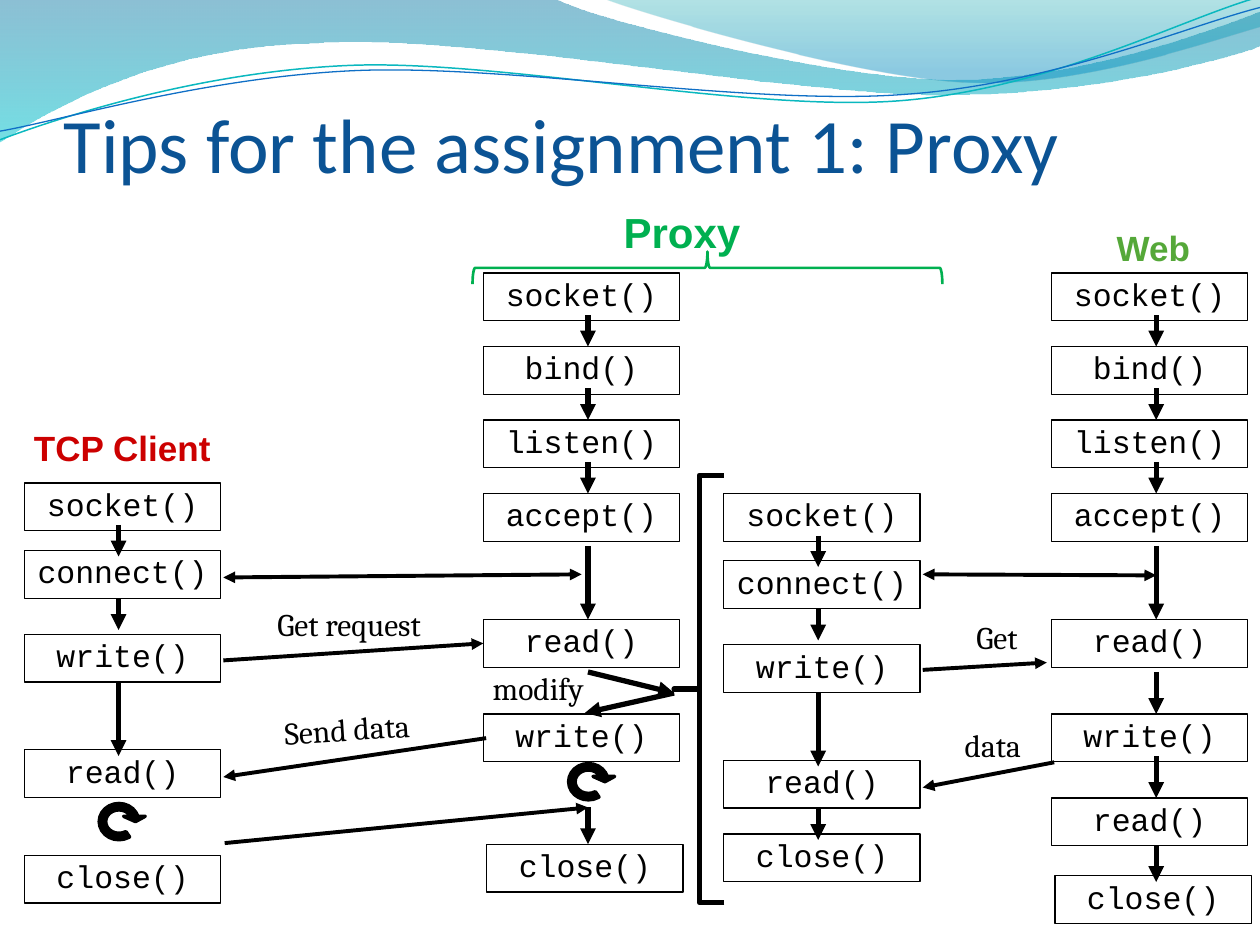
from dataclasses import dataclass, field
from typing import Any, NamedTuple

from lxml import etree
from pptx import Presentation
from pptx import util as u
from pptx.dml.color import RGBColor
from pptx.enum import shapes, text
from pptx.oxml.ns import qn

WIDTH, HEIGHT = u.Inches(10), u.Inches(7.5)
COLUMNS, ROWS = 120, 90
BOX_WIDTH, BOX_HEIGHT = 18.7, 4.55

BLACK = RGBColor(0x00, 0x00, 0x00)
TITLE_BLUE = RGBColor(0x0B, 0x53, 0x94)
GREEN = RGBColor(0x00, 0xB0, 0x50)
WEB_GREEN = RGBColor(0x55, 0xA8, 0x39)
RED = RGBColor(0xCC, 0x00, 0x00)
WAVE_TEAL = RGBColor(0x0A, 0xB8, 0xBF)
WAVE_BLUE = RGBColor(0x0F, 0x6F, 0xC6)
DEEP_BLUE = RGBColor(0x00, 0x74, 0xA1)
AQUA = RGBColor(0x00, 0xC6, 0xCF)
SEA_GREEN = RGBColor(0x00, 0xA1, 0xA9)
SKY_BLUE = RGBColor(0x00, 0x8B, 0xBF)

CODE = dict(name="Courier New", size=u.Pt(18))
NOTE = dict(name="Cambria", size=u.Pt(18))
HEADING = dict(name="Arial", size=u.Pt(20), bold=True)


class Stop(NamedTuple):
    position: float
    color: RGBColor
    opacity: int  # percent


class Call(NamedTuple):
    name: str
    row: float
    shift: float = 0


@dataclass
class Lane:
    left: float
    arrow_column: float
    calls: list[Call]
    arrows: list[tuple[float, float]]
    boxes: list[Any] = field(default_factory=list)


@dataclass
class Label:
    words: str
    left: float
    top: float
    width: float
    height: float
    font: dict
    color: RGBColor = BLACK
    rotation: float = 0
    wrap: bool = False


@dataclass
class Message:
    start: tuple[float, float]
    end: tuple[float, float]
    width: float = 2.25
    both: bool = False
    end_joint: tuple | None = None  # box, side


def x(column: float) -> int:
    return round(WIDTH * column / COLUMNS)


def y(row: float) -> int:
    return round(HEIGHT * row / ROWS)


def set_line(shape, color: RGBColor, width: float) -> None:
    shape.line.color.rgb = color
    shape.line.width = u.Pt(width)


def write(shape, words: str, font: dict, color: RGBColor, frame: dict, layout: dict) -> None:
    paragraph = shape.text_frame.paragraphs[0]
    run = paragraph.add_run()
    run.text = words
    run.font.color.rgb = color
    for target, formats in ((shape.text_frame, frame), (paragraph, layout), (run.font, font)):
        for name, value in formats.items():
            setattr(target, name, value)


def add_preset(slide, kind, left, top, width, height, color=BLACK, line=0.75,
               filled=False, adjustments=(), rotation=0):
    shape = slide.shapes.add_shape(kind, x(left), y(top), x(width), y(height))
    shape.shadow.inherit = False
    shape.rotation = rotation
    if filled:
        shape.fill.solid()
        shape.fill.fore_color.rgb = color
    else:
        shape.fill.background()
    set_line(shape, color, line)
    for index, value in enumerate(adjustments):
        shape.adjustments[index] = value
    return shape


def add_label(slide, label: Label) -> None:
    box = slide.shapes.add_textbox(x(label.left), y(label.top), x(label.width), y(label.height))
    box.rotation = label.rotation
    write(box, label.words, label.font, label.color,
          dict(word_wrap=label.wrap, vertical_anchor=text.MSO_ANCHOR.MIDDLE,
               auto_size=text.MSO_AUTO_SIZE.SHAPE_TO_FIT_TEXT),
          dict(alignment=text.PP_ALIGN.CENTER))


def add_arrow(slide, message: Message) -> None:
    (x1, y1), (x2, y2) = message.start, message.end
    arrow = slide.shapes.add_connector(shapes.MSO_CONNECTOR.STRAIGHT, x(x1), y(y1), x(x2), y(y2))
    set_line(arrow, BLACK, message.width)
    if message.end_joint:
        arrow.end_connect(*message.end_joint)
    for tag in ("a:headEnd", "a:tailEnd") if message.both else ("a:tailEnd",):
        etree.SubElement(arrow.line._get_or_add_ln(), qn(tag), type="triangle")
    etree.SubElement(arrow._element.spPr, qn("a:effectLst"))


def add_lane(slide, lane: Lane) -> None:
    for call in lane.calls:
        box = add_preset(slide, shapes.MSO_SHAPE.RECTANGLE, lane.left + call.shift, call.row,
                         BOX_WIDTH, BOX_HEIGHT)
        write(box, call.name + "()", CODE, BLACK,
              dict(word_wrap=False, vertical_anchor=text.MSO_ANCHOR.TOP),
              dict(alignment=text.PP_ALIGN.CENTER, line_spacing=0.9))
        lane.boxes.append(box)
    for start, end in lane.arrows:
        add_arrow(slide, Message((lane.arrow_column, start), (lane.arrow_column, end), 3))


def add_wave(slide, start, segments, stops=(), color=None, width=0.75, rotation=0) -> None:
    """Points are percentages of the slide width; six numbers make a cubic curve."""
    points = [start] + [pair for segment in segments for pair in zip(segment[::2], segment[1::2])]
    points = [(round(a * WIDTH / 100), round(b * WIDTH / 100)) for a, b in points]
    builder = slide.shapes.build_freeform(*points[0], scale=1.0)
    builder.add_line_segments(points[1:], close=bool(stops))
    wave = builder.convert_to_shape()
    wave.shadow.inherit = False
    wave.rotation = rotation
    # Gather each three points of a curve under one cubic element
    lines = iter(list(wave._element.iter(qn("a:lnTo"))))
    for segment in segments:
        parts = [next(lines) for _ in segment[::2]]
        if len(parts) == 3:
            curve = etree.Element(qn("a:cubicBezTo"))
            parts[0].addprevious(curve)
            for part in parts:
                curve.append(part[0])
                part.getparent().remove(part)
    if not stops:
        wave.fill.background()
        set_line(wave, color, width)
        return
    wave.line.fill.background()
    wave.fill.gradient()
    wave.fill.gradient_angle = 270
    for target, stop in zip(wave.fill.gradient_stops, stops):
        target.position = stop.position
        target.color.rgb = stop.color
        etree.SubElement(target._gs[0], qn("a:alpha"), val=str(stop.opacity * 1000))


def main() -> None:
    presentation = Presentation()
    presentation.slide_width, presentation.slide_height = WIDTH, HEIGHT
    slide = presentation.slides.add_slide(presentation.slide_layouts[6])

    # Waves along the top
    add_wave(slide, (0, 0), [(44, -0.1), (47.6, 1.7, 66.4, 6.3, 75.8, 6.3),
             (85.3, 6.3, 95.8, 2.6, 100, 0.9), (100.1, 3.6), (98.3, 4.4, 87, 7.6, 74.6, 7.5),
             (62.2, 7.5, 38.2, 2.8, 25.7, 3.4), (12.9, 3.6, 4.6, 8.3, -0.1, 11.3)],
             (Stop(0, DEEP_BLUE, 45), Stop(1, AQUA, 55)))
    add_wave(slide, (47.9, -0.1), [(50.9, 1.1, 68.2, 6.2, 76.9, 6.5),
             (85.6, 6.9, 96.1, 3.2, 100, 2.1), (100, 0)],
             (Stop(0, SEA_GREEN, 30), Stop(0.8, SKY_BLUE, 45)))
    add_wave(slide, (-0.2, 8.74), [(4.68, 7.17, 15.84, 4.09, 27.75, 4.15),
             (39.56, 4.21, 59.14, 9.34, 71.17, 9.01), (83.2, 8.67, 93.95, 3.57, 100.03, 2.16)],
             color=WAVE_TEAL, width=0.85, rotation=357.3)
    add_wave(slide, (-0.16, 8.05), [(4.58, 7.47, 16.43, 4.52, 28.34, 4.58),
             (40.35, 4.65, 59.57, 8.86, 71.6, 8.52), (83.53, 8.28, 94.23, 4.18, 100.19, 2.96)],
             color=WAVE_BLUE, rotation=357.3)

    # Title
    title = slide.shapes.add_textbox(x(6.06), y(3), x(108), y(15))
    write(title, "Tips for the assignment 1: Proxy", dict(name="Calibri", size=u.Pt(44)), TITLE_BLUE,
          dict(word_wrap=True, vertical_anchor=text.MSO_ANCHOR.BOTTOM, margin_left=0,
               margin_right=0, margin_top=u.Inches(0.05), margin_bottom=0), {})

    # Lanes of calls
    opening = [Call("socket", 26), Call("bind", 33), Call("listen", 40), Call("accept", 47),
               Call("read", 59), Call("write", 68)]
    opening_arrows = [(30, 33), (37, 40), (44, 47), (52, 59)]
    proxy = Lane(46.03, 56, opening + [Call("close", 80.4, 0.33)], opening_arrows + [(76.9, 80.4)])
    web = Lane(100.14, 110.12, opening + [Call("read", 76), Call("close", 83.4, 0.33)],
               opening_arrows + [(64, 68), (72, 76), (80.5, 84)])
    client = Lane(2.33, 11.3, [Call("socket", 46), Call("connect", 52.42), Call("write", 60.4),
                  Call("read", 71.4), Call("close", 81.45)], [(50, 53), (57, 60), (65, 72)])
    relay = Lane(68.94, 77.92, [Call("socket", 47), Call("connect", 53.4), Call("write", 61.4),
                 Call("read", 72.4), Call("close", 79.42)], [(51, 54), (58, 61), (66, 73), (77, 80)])
    for lane in (proxy, web, client, relay):
        add_lane(slide, lane)

    # Messages between lanes
    for message in (
        Message((21.27, 55), (55.4, 54.7), both=True),
        Message((21.27, 62.9), (46.1, 61.3), end_joint=(proxy.boxes[4], 1)),
        Message((46.3, 70.3), (21.27, 74)),
        Message((21.4, 80.3), (56, 76.9)),
        Message((56, 64), (64.2, 66), 3),
        Message((64.2, 66), (55.7, 67.9), 3),
        Message((87.88, 54.7), (110.12, 54.8), both=True),
        Message((87.88, 63.8), (99.7, 63.1)),
        Message((100.4, 72.6), (87.88, 75)),
    ):
        add_arrow(slide, message)

    # Headings and notes
    for label in (
        Label("Proxy", 52, 19.05, 25.9, 6, {**HEADING, "size": u.Pt(24)}, GREEN, wrap=True),
        Label("TCP Client", 2, 40, 19.3, 5.2, HEADING, RED),
        Label("Web", 105.1, 20.95, 9.5, 5.3, HEADING, WEB_GREEN),
        Label("Get request", 23.3, 57, 19.9, 4.8, NOTE),
        Label("Send data", 24.1, 67, 17.9, 4.8, NOTE, rotation=356.2),
        Label("Get", 90.95, 58.25, 8, 4.8, NOTE),
        Label("data", 89.75, 68.55, 9.6, 4.8, NOTE),
        Label("modify", 45, 63.15, 12.5, 4.8, NOTE),
    ):
        add_label(slide, label)

    # Braces and loop marks
    add_preset(slide, shapes.MSO_SHAPE.LEFT_BRACE, 64.2, 45.26, 4.8, 40.7, line=3,
               adjustments=(0, 0.5))
    add_preset(slide, shapes.MSO_SHAPE.RIGHT_BRACE, 65.83, 3.13, 3.1, 44.75, GREEN, 1.5, rotation=270)
    for left, top in ((53.44, 72), (8.73, 75.8)):
        add_preset(slide, shapes.MSO_SHAPE.CIRCULAR_ARROW, left, top, 5.2, 4.9, line=2, filled=True,
                   adjustments=(0.125, 11.42, 204.58, 33.21, 0.21))
    presentation.save("out.pptx")


if __name__ == "__main__":
    main()
